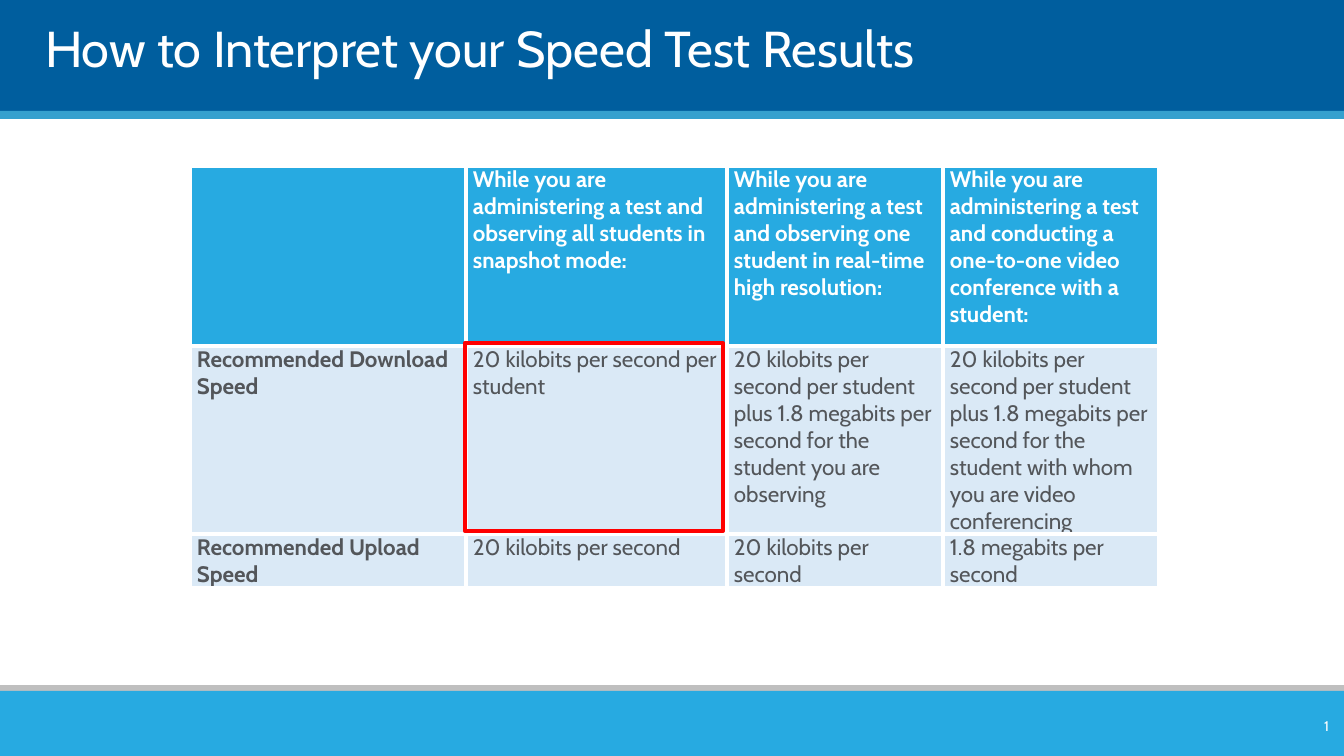
from lxml import etree
from pptx import Presentation
from pptx.dml.color import RGBColor
from pptx.enum.shapes import MSO_SHAPE
from pptx.enum.text import MSO_ANCHOR, MSO_AUTO_SIZE, PP_ALIGN
from pptx.oxml.ns import qn
from pptx.util import Pt

EMU_PER_PX = 914400 / 100.8
SLIDE_SIZE = (1344, 756)
FONT = "Cabin"
COLORS = {
    "white": "FFFFFF",
    "navy": "005E9E",
    "stripe": "35A0CE",
    "gray": "BFBFBF",
    "sky": "27AAE1",
    "pale": "DAE9F6",
    "text": "53565A",
    "red": "FF0000",
}
RECTANGLE = MSO_SHAPE.RECTANGLE
LEFT, RIGHT = PP_ALIGN.LEFT, PP_ALIGN.RIGHT
TOP, MIDDLE, BOTTOM = MSO_ANCHOR.TOP, MSO_ANCHOR.MIDDLE, MSO_ANCHOR.BOTTOM
NO_AUTOFIT = MSO_AUTO_SIZE.NONE

BANDS = [
    ((0, -1, 1344, 116), "navy"),
    ((0, 111, 1344, 8), "stripe"),
    ((0, 685, 1344, 14), "gray"),
    ((0, 691, 1344, 65), "sky"),
]
COLUMN_WIDTHS = [276, 261, 216, 216]
ROW_HEIGHTS = [180, 180, 51]
SPEEDS = [
    [
        "",
        "While you are administering a test and observing all students in snapshot mode:",
        "While you are administering a test and observing one student in real-time high resolution:",
        "While you are administering a test and conducting a one-to-one video conference with a student:",
    ],
    [
        "Recommended Download Speed",
        "20 kilobits per second per student",
        "20 kilobits per second per student plus 1.8 megabits per second for the student you are observing",
        "20 kilobits per second per student plus 1.8 megabits per second for the student with whom "
        "you are video conferencing",
    ],
    [
        "Recommended Upload Speed",
        "20 kilobits per second",
        "20 kilobits per second",
        "1.8 megabits per second",
    ],
]


def px(length):
    return round(length * EMU_PER_PX)


def emu_box(box):
    return [px(length) for length in box]


def rgb(color):
    return RGBColor.from_string(COLORS[color])


def write(frame, text, size, color, bold=False, align=LEFT, space_after=0):
    """Put one formatted paragraph in a text frame and return its run."""
    frame.word_wrap = True
    paragraph = frame.paragraphs[0]
    paragraph.alignment = align
    paragraph.space_after = Pt(space_after)
    run = paragraph.add_run()
    run.text = text
    run.font.name = FONT
    run.font.size = Pt(size)
    run.font.bold = bold
    run.font.color.rgb = rgb(color)
    return run


def add_rectangle(slide, box, fill=None, line=None, line_width=3):
    rectangle = slide.shapes.add_shape(RECTANGLE, *emu_box(box))
    rectangle.shadow.inherit = False
    if fill:
        rectangle.fill.solid()
        rectangle.fill.fore_color.rgb = rgb(fill)
    else:
        rectangle.fill.background()
    if line:
        rectangle.line.color.rgb = rgb(line)
        rectangle.line.width = Pt(line_width)
    else:
        rectangle.line.fill.background()


def place_title(slide, box, text):
    title = slide.shapes.title
    title.left, title.top, title.width, title.height = emu_box(box)
    frame = title.text_frame
    frame.auto_size = NO_AUTOFIT
    frame.vertical_anchor = BOTTOM
    frame.margin_left = frame.margin_right = 0
    frame.margin_top = frame.margin_bottom = 0
    write(frame, text, 36, "white")


def add_slide_number(slide, box, number):
    frame = slide.shapes.add_textbox(*emu_box(box)).text_frame
    frame.vertical_anchor = MIDDLE
    field = write(frame, number, 10, "white", align=RIGHT)._r
    field.tag = qn("a:fld")
    field.set("id", "{B6F15528-21DE-4FAA-801E-634DDDAF4B2B}")
    field.set("type", "slidenum")


def add_borders(cell, color, width):
    """Draw all four edges; call before the fill, which must follow them."""
    properties = cell._tc.get_or_add_tcPr()
    for edge in ("a:lnL", "a:lnR", "a:lnT", "a:lnB"):
        border = etree.SubElement(properties, qn(edge), w=str(Pt(width)))
        fill = etree.SubElement(border, qn("a:solidFill"))
        etree.SubElement(fill, qn("a:srgbClr"), val=COLORS[color])


def format_cell(cell, text, is_header, is_label):
    cell.margin_left = cell.margin_right = px(7)
    cell.margin_top = cell.margin_bottom = 0
    cell.vertical_anchor = TOP
    add_borders(cell, "white", 3)
    cell.fill.solid()
    cell.fill.fore_color.rgb = rgb("sky" if is_header else "pale")
    if text:
        write(cell.text_frame, text, 16, "white" if is_header else "text",
              bold=is_header or is_label, space_after=6)


def add_speed_table(slide, left, top):
    box = (left, top, sum(COLUMN_WIDTHS), sum(ROW_HEIGHTS))
    table = slide.shapes.add_table(len(SPEEDS), len(COLUMN_WIDTHS), *emu_box(box)).table
    table.horz_banding = False
    for column, width in zip(table.columns, COLUMN_WIDTHS):
        column.width = px(width)
    for row, height in zip(table.rows, ROW_HEIGHTS):
        row.height = px(height)
    for r, texts in enumerate(SPEEDS):
        for c, text in enumerate(texts):
            format_cell(table.cell(r, c), text, is_header=r == 0, is_label=c == 0)


def main():
    deck = Presentation()
    deck.slide_width, deck.slide_height = emu_box(SLIDE_SIZE)
    slide = deck.slides.add_slide(deck.slide_layouts.get_by_name("Title Only"))
    for box, color in BANDS:
        add_rectangle(slide, box, fill=color)
    # The title comes first in the layout, so bring it in front of the bands.
    slide.shapes._spTree.append(slide.shapes.title._element)
    place_title(slide, (45, 21, 1253, 57), "How to Interpret your Speed Test Results")
    add_slide_number(slide, (1261, 711, 78, 30), "9")
    add_speed_table(slide, 190, 166)
    add_rectangle(slide, (465, 343, 258, 188), line="red")
    deck.save("out.pptx")


if __name__ == "__main__":
    main()
